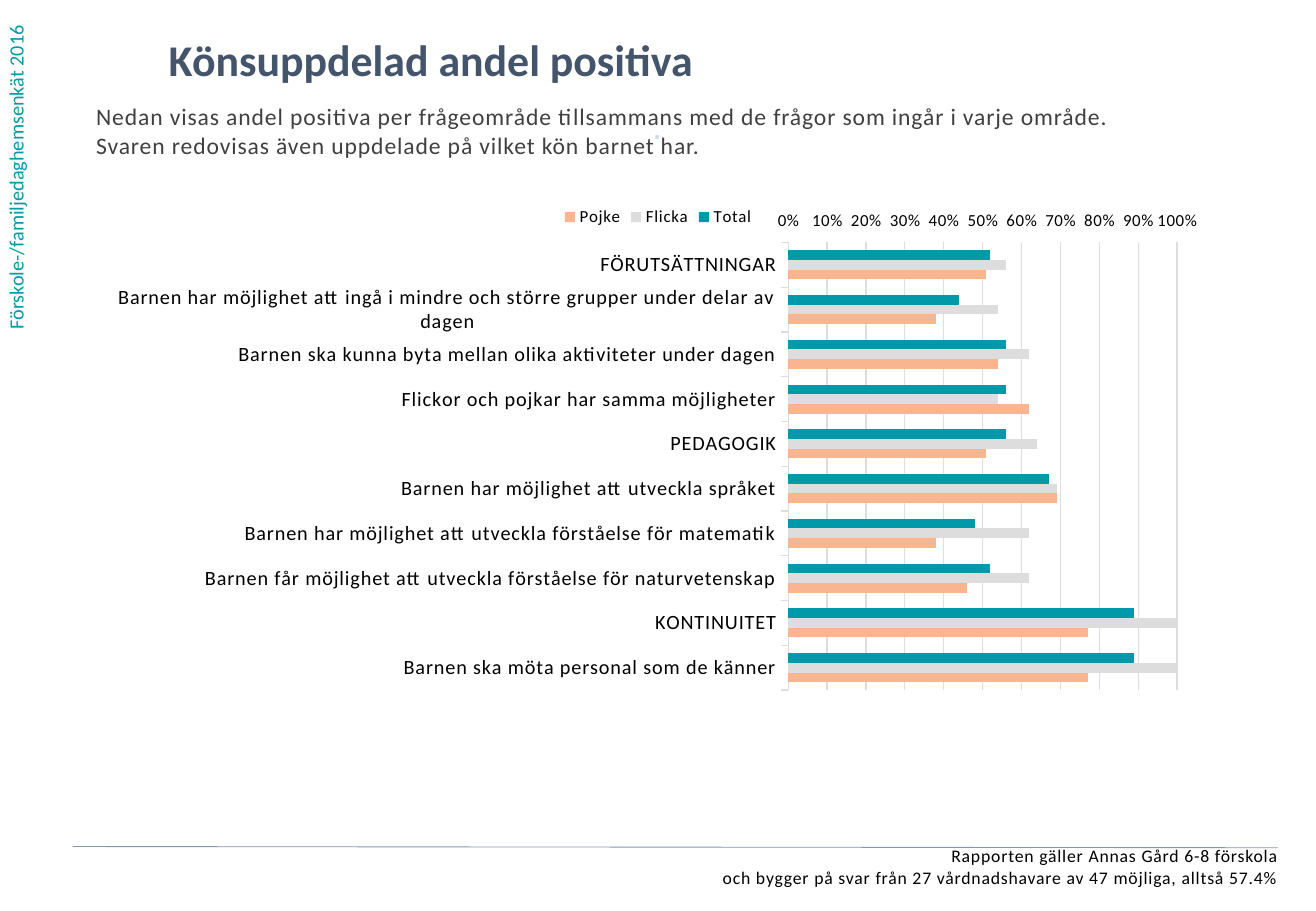
from dataclasses import dataclass
from lxml import etree
from pptx import Presentation
from pptx.chart.data import CategoryChartData
from pptx.dml.color import RGBColor
from pptx.enum.chart import (XL_AXIS_CROSSES as CROSSES, XL_CHART_TYPE as CHART,
                             XL_LEGEND_POSITION as LEGEND, XL_TICK_MARK as TICK)
from pptx.enum.shapes import MSO_CONNECTOR as CONNECTOR
from pptx.enum.text import MSO_ANCHOR as ANCHOR, PP_ALIGN as ALIGN
from pptx.oxml import parse_xml
from pptx.oxml.ns import nsdecls, qn
from pptx.util import Pt


@dataclass(frozen=True)
class Theme:
    font: str = "Calibri"
    teal: str = "009BA4"
    navy: str = "44546A"
    body: str = "404040"
    black: str = "000000"
    dot: str = "D2D9E2"
    rule: str = "8497B0"
    grid: str = "DDDDDD"
    title_size: float = 26
    body_size: float = 14
    label_size: float = 12
    foot_size: float = 10.5
    chart_size: float = 10
    spacing: str = "50"


def assign(target, values):
    for name, value in values.items():
        setattr(target, name, value)


class Page:
    def __init__(self, prs, theme):
        self.theme = theme
        self.s = prs.slides.add_slide(prs.slide_layouts[6])

    def style(self, font, size, color, bold=False):
        assign(font, {"name": self.theme.font, "size": Pt(size), "bold": bold})
        font.color.rgb = RGBColor.from_string(color)

    def text(self, box, lines, size, color, bold=False, align=ALIGN.LEFT,
             spaced=False, vertical=False):
        sp = self.s.shapes.add_textbox(*map(Pt, box))
        tf = sp.text_frame
        assign(tf, {"word_wrap": True, "vertical_anchor": ANCHOR.TOP})
        if vertical:
            tf._txBody.bodyPr.set("vert", "vert270")
        else:
            assign(tf, dict.fromkeys(("margin_left", "margin_top",
                                      "margin_right", "margin_bottom"), 0))
        for i, line in enumerate(lines):
            p = tf.add_paragraph() if i else tf.paragraphs[0]
            p.alignment = align
            r = p.add_run()
            r.text = line
            self.style(r.font, size, color, bold)
            if spaced:
                r._r.get_or_add_rPr().set("spc", self.theme.spacing)

    def line(self, start, end, color, width):
        c = self.s.shapes.add_connector(CONNECTOR.STRAIGHT, *map(Pt, start + end))
        c.line.color.rgb = RGBColor.from_string(color)
        c.line.width = Pt(width)
        etree.SubElement(c._element.spPr, qn("a:effectLst"))

    def bars(self, box, categories, series, plot_area):
        t = self.theme
        data = CategoryChartData(number_format="0%")
        data.categories = categories
        for name, values, _ in series:
            data.add_series(name, values)
        chart = self.s.shapes.add_chart(CHART.BAR_CLUSTERED, *map(Pt, box), data).chart
        assign(chart, {"has_title": False, "has_legend": True})
        assign(chart.legend, {"position": LEGEND.TOP, "include_in_layout": False})
        plot = chart.plots[0]
        assign(plot, {"gap_width": 162, "overlap": 0, "vary_by_categories": False})
        for ser, (_, _, color) in zip(plot.series, series):
            ser.format.fill.solid()
            ser.format.fill.fore_color.rgb = RGBColor.from_string(color)
        cat, val = chart.category_axis, chart.value_axis
        assign(cat, {"reverse_order": True, "crosses": CROSSES.MAXIMUM,
                     "major_tick_mark": TICK.OUTSIDE, "has_major_gridlines": False})
        assign(val, {"minimum_scale": 0, "maximum_scale": 1, "major_unit": 0.1,
                     "major_tick_mark": TICK.OUTSIDE, "has_major_gridlines": True})
        assign(val.tick_labels, {"number_format": "0%;0%",
                                 "number_format_is_linked": False})
        val.format.line.fill.background()
        for line in (cat.format.line, val.major_gridlines.format.line):
            line.color.rgb = RGBColor.from_string(t.grid)
            line.width = Pt(0.75)
        for font, size in ((chart.font, t.chart_size),
                           (chart.legend.font, t.chart_size),
                           (cat.tick_labels.font, t.label_size),
                           (val.tick_labels.font, t.chart_size)):
            self.style(font, size, t.black)
        for props in chart._chartSpace.iter(qn("a:defRPr")):
            props.set("spc", t.spacing)
        self.place_plot(chart, plot_area)

    def place_plot(self, chart, plot_area):
        area = chart._chartSpace.find(".//" + qn("c:plotArea"))
        for old in area.findall(qn("c:layout")):
            area.remove(old)
        marks = '<c:layoutTarget val="inner"/><c:xMode val="edge"/><c:yMode val="edge"/>'
        sizes = "".join(f'<c:{k} val="{v}"/>' for k, v in zip("xywh", plot_area))
        area.insert(0, parse_xml(f'<c:layout {nsdecls("c")}><c:manualLayout>'
                                 f'{marks}{sizes}</c:manualLayout></c:layout>'))


CATEGORIES = [
    "FÖRUTSÄTTNINGAR",
    "Barnen har möjlighet att ingå i mindre och större grupper under delar av dagen",
    "Barnen ska kunna byta mellan olika aktiviteter under dagen",
    "Flickor och pojkar har samma möjligheter",
    "PEDAGOGIK",
    "Barnen har möjlighet att utveckla språket",
    "Barnen har möjlighet att utveckla förståelse för matematik",
    "Barnen får möjlighet att utveckla förståelse för naturvetenskap",
    "KONTINUITET",
    "Barnen ska möta personal som de känner",
]
SERIES = [
    ("Total", [0.52, 0.44, 0.56, 0.56, 0.56, 0.67, 0.48, 0.52, 0.89, 0.89], "0099AA"),
    ("Flicka", [0.56, 0.54, 0.62, 0.54, 0.64, 0.69, 0.62, 0.62, 1, 1], "DDDDDD"),
    ("Pojke", [0.51, 0.38, 0.54, 0.62, 0.51, 0.69, 0.38, 0.46, 0.77, 0.77], "F9B590"),
]


def main():
    prs = Presentation()
    assign(prs, {"slide_width": Pt(780), "slide_height": Pt(540)})
    t = Theme()
    page = Page(prs, t)
    page.text((-1.5, 0, 29, 202.5), ["Förskole-/familjedaghemsenkät 2016"],
              t.label_size, t.teal, vertical=True)
    page.text((100, 19.5, 600, 41), ["Könsuppdelad andel positiva"],
              t.title_size, t.navy, bold=True)
    page.text((57, 60.5, 681, 73),
              ["Nedan visas andel positiva per frågeområde tillsammans med de frågor "
               "som ingår i varje område.",
               "Svaren redovisas även uppdelade på vilket kön barnet har."],
              t.body_size, t.body, spaced=True)
    page.text((8.5, 501, 749, 31),
              ["Rapporten gäller Annas Gård 6-8 förskola",
               "och bygger på svar från 27 vårdnadshavare av 47 möjliga, alltså 57.4%"],
              t.foot_size, t.black, align=ALIGN.RIGHT, spaced=True)
    page.text((278.5, 73.5, 222, 28), ["⋅"], t.label_size, t.dot, bold=True,
              align=ALIGN.CENTER, spaced=True)
    page.bars((57, 115, 666, 319), CATEGORIES, SERIES, (0.616, 0.09, 0.346, 0.832))
    page.line((43, 501.8), (757.5, 502.5), t.rule, 0.5)
    prs.save("out.pptx")


if __name__ == "__main__":
    main()
